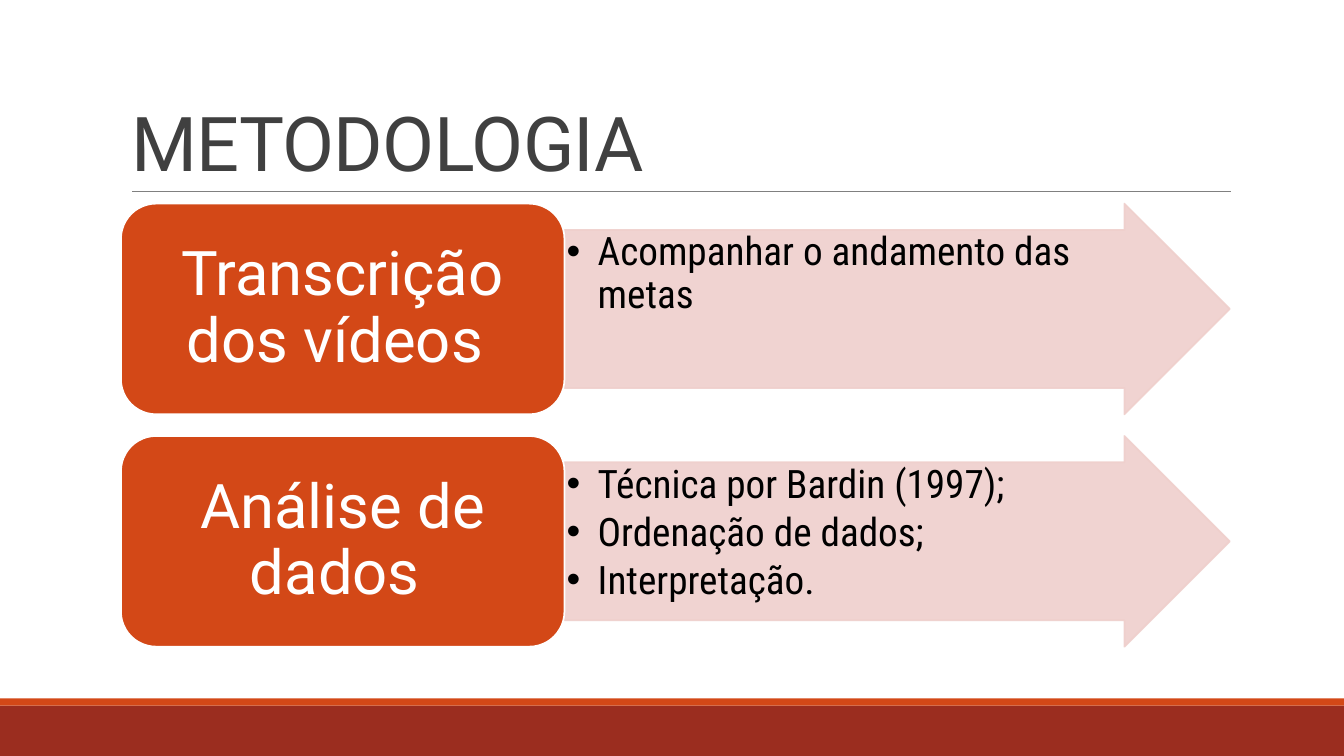
from dataclasses import dataclass

from lxml import etree
from pptx import Presentation
from pptx.dml.color import RGBColor
from pptx.enum.shapes import MSO_CONNECTOR, MSO_SHAPE
from pptx.enum.text import MSO_ANCHOR, MSO_AUTO_SIZE, PP_ALIGN
from pptx.oxml.ns import qn
from pptx.util import Emu, Inches, Pt

RECT, ROUND = MSO_SHAPE.RECTANGLE, MSO_SHAPE.ROUNDED_RECTANGLE
ARROW, LINE = MSO_SHAPE.RIGHT_ARROW, MSO_CONNECTOR.STRAIGHT
TOP, MIDDLE, BOTTOM = MSO_ANCHOR.TOP, MSO_ANCHOR.MIDDLE, MSO_ANCHOR.BOTTOM
LEFT, CENTER = PP_ALIGN.LEFT, PP_ALIGN.CENTER
FIXED = MSO_AUTO_SIZE.NONE

BLACK = RGBColor(0x00, 0x00, 0x00)
WHITE = RGBColor(0xFF, 0xFF, 0xFF)
DARK = RGBColor(0x40, 0x40, 0x40)
GRAY = RGBColor(0x80, 0x80, 0x80)
ORANGE = RGBColor(0xD3, 0x48, 0x17)
BRICK = RGBColor(0x9B, 0x2D, 0x1F)
PINK = RGBColor(0xEF, 0xCF, 0xCC)

# Grid: ten cells to the inch
CELL = Inches(0.1)
WIDE, HIGH = 133.33, 75
EDGE, SPAN = 12, 110      # content columns
SPLIT = EDGE + SPAN * 0.4  # label ends, arrow begins
FIRST, TALL, STEP = 20.2, 20.9, 23.05  # step rows
INSET = TALL / 8          # arrow edge to its shaft


@dataclass(frozen=True)
class Box:
    col: float
    row: float
    cols: float
    rows: float


@dataclass(frozen=True)
class Look:
    font: dict
    para: dict
    frame: dict


@dataclass(frozen=True)
class Step:
    label: str
    points: tuple[str, ...]


TITLE = Look(
    {"name": "Roboto", "size": Pt(54)},
    {"alignment": LEFT, "line_spacing": 0.85},
    {"vertical_anchor": BOTTOM},
)
LABEL = Look(
    {"name": "Roboto", "size": Pt(44)},
    {"alignment": CENTER, "line_spacing": 0.9},
    {"vertical_anchor": MIDDLE, "margin_left": Inches(0.18),
     "margin_right": Inches(0.18), "margin_top": Inches(0.09),
     "margin_bottom": Inches(0.09)},
)
LIST = Look(
    {"name": "Roboto Condensed", "size": Pt(28)},
    {"alignment": LEFT, "line_spacing": 0.9,
     "space_before": Pt(0), "space_after": Pt(4)},
    {"vertical_anchor": TOP, "margin_left": Inches(0.02),
     "margin_right": Inches(0.02), "margin_top": Inches(0.02),
     "margin_bottom": Inches(0.02)},
)

STEPS = (
    Step("Transcrição dos vídeos ", ("Acompanhar o andamento das metas",)),
    Step("Análise de dados ", ("Técnica por Bardin (1997);",
                               "Ordenação de dados;", "Interpretação.")),
)


def cells(count: float) -> Emu:
    return Emu(round(count * CELL))


def apply(item, values: dict) -> None:
    for name, value in values.items():
        setattr(item, name, value)


def place(shape, box: Box) -> None:
    apply(shape, {"left": cells(box.col), "top": cells(box.row),
                  "width": cells(box.cols), "height": cells(box.rows)})


def write(shape, lines: tuple[str, ...], look: Look, color: RGBColor) -> None:
    frame = shape.text_frame
    frame.text = "\n".join(lines)
    apply(frame, {"word_wrap": True, "auto_size": FIXED} | look.frame)
    for para in frame.paragraphs:
        apply(para, look.para)
        for run in para.runs:
            apply(run.font, look.font)
            run.font.color.rgb = color


def draw(slide, kind, box: Box, fill: RGBColor, edge: RGBColor | None = None):
    shape = slide.shapes.add_shape(kind, 0, 0, 0, 0)
    place(shape, box)
    shape.shadow.inherit = False
    shape.fill.solid()
    shape.fill.fore_color.rgb = fill
    if edge is None:
        shape.line.fill.background()
    else:
        shape.line.color.rgb = edge
        shape.line.width = Pt(1.25)
    return shape


def fade(shape, share: int) -> None:
    for color in shape.element.spPr.iter(qn("a:srgbClr")):
        etree.SubElement(color, qn("a:alpha")).set("val", str(share * 1000))


def rule(slide, col: float, row: float, cols: float) -> None:
    line = slide.shapes.add_connector(
        LINE, cells(col), cells(row), cells(col + cols), cells(row))
    line.line.color.rgb = GRAY
    line.line.width = Pt(0.5)
    etree.SubElement(line.element.spPr, qn("a:effectLst"))


def add_step(slide, body, step: Step, row: float) -> None:
    # Arrow
    arrow = draw(slide, ARROW, Box(SPLIT, row, SPAN * 0.6, TALL), PINK, PINK)
    arrow.adjustments[0], arrow.adjustments[1] = 0.75, 0.5
    fade(arrow, 90)

    # List, lifted above its arrow
    place(body, Box(SPLIT, row + INSET, 58.1, TALL - 2 * INSET))
    write(body, step.points, LIST, BLACK)
    for para in body.text_frame.paragraphs:
        props = para._p.get_or_add_pPr()
        props.set("marL", str(Inches(0.31)))
        props.set("indent", str(-Inches(0.31)))
    arrow.element.addnext(body.element)

    # Label
    label = draw(slide, ROUND, Box(EDGE, row, SPAN * 0.4, TALL), ORANGE, WHITE)
    write(label, (step.label,), LABEL, WHITE)


def main() -> None:
    deck = Presentation()
    deck.slide_width, deck.slide_height = cells(WIDE), cells(HIGH)
    slide = deck.slides.add_slide(deck.slide_layouts[3])
    title, *bodies = slide.placeholders

    # Footer bands and title rule
    draw(slide, RECT, Box(0, 70, WIDE, 5), BRICK)
    draw(slide, RECT, Box(0, 69.3, WIDE, 0.7), ORANGE)
    rule(slide, 13.1, 19, 109)

    # Title
    place(title, Box(EDGE, 3.1, SPAN, 15.9))
    write(title, ("METODOLOGIA",), TITLE, DARK)
    for run in title.text_frame.paragraphs[0].runs:
        run.font._element.set("spc", "-50")

    # Steps
    for index, (body, step) in enumerate(zip(bodies, STEPS)):
        add_step(slide, body, step, FIRST + index * STEP)

    deck.save("out.pptx")


if __name__ == "__main__":
    main()
